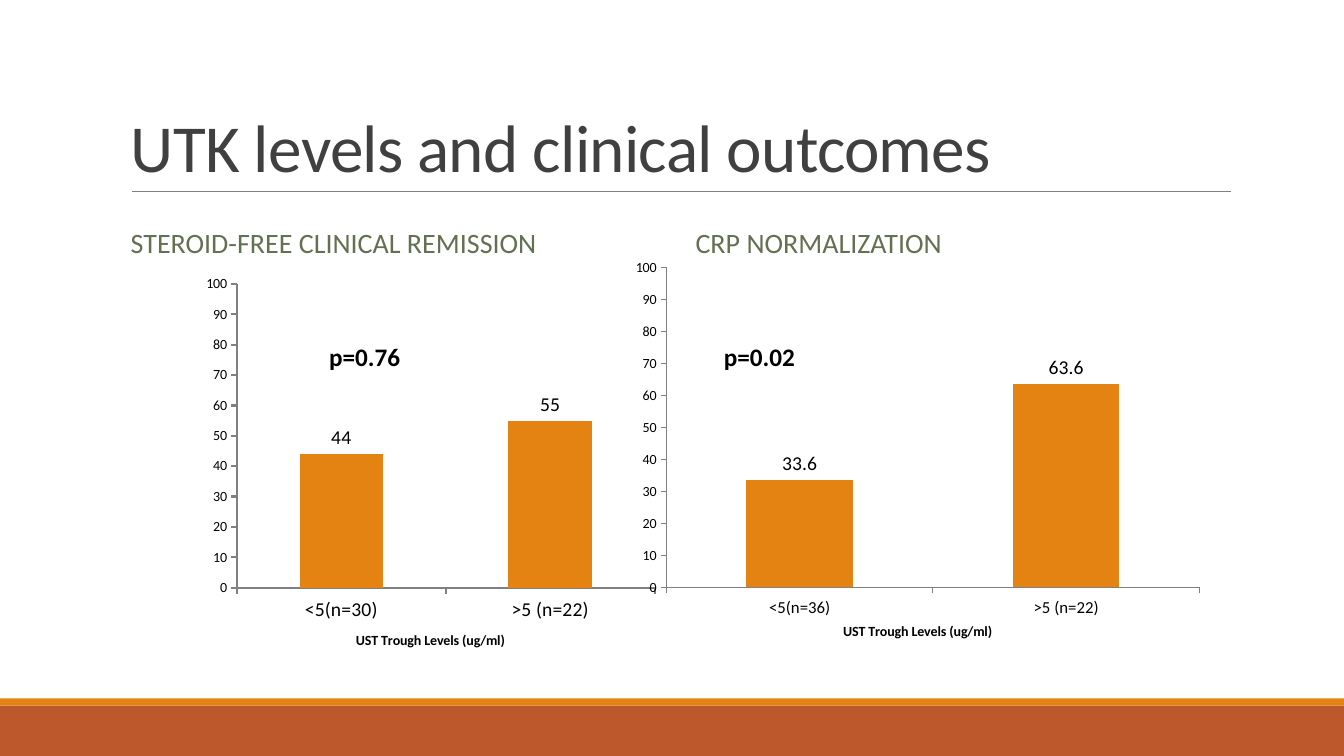
from lxml.etree import SubElement
from pptx import Presentation
from pptx.chart.data import CategoryChartData
from pptx.dml.color import RGBColor
from pptx.enum.chart import XL_CHART_TYPE, XL_LABEL_POSITION, XL_TICK_MARK
from pptx.enum.shapes import MSO_CONNECTOR, MSO_SHAPE
from pptx.enum.text import MSO_ANCHOR, PP_ALIGN
from pptx.oxml import parse_xml
from pptx.oxml.ns import nsdecls, qn
from pptx.util import Pt

EMU_PER_PX = 9525  # 96 px to the inch
TITLE_ONLY = 5

RUST = RGBColor(0xBD, 0x58, 0x2C)
ORANGE = RGBColor(0xE4, 0x83, 0x12)
OLIVE = RGBColor(0x63, 0x70, 0x52)
CHARCOAL = RGBColor(0x40, 0x40, 0x40)
GRAY = RGBColor(0x80, 0x80, 0x80)
BLACK = RGBColor(0, 0, 0)


def px(*lengths):
    return [length * EMU_PER_PX for length in lengths]


class OutcomeSlide:
    font_name = "Calibri"

    def __init__(self, presentation):
        self.slide = presentation.slides.add_slide(presentation.slide_layouts[TITLE_ONLY])
        self.shapes = self.slide.shapes

    def style_font(self, font, size, color, bold=False):
        font.name, font.size, font.bold = self.font_name, Pt(size), bold
        font.color.rgb = color

    def fill_frame(self, frame, words, size, color, anchor, bold=False, line_spacing=1.0):
        frame.word_wrap = True
        frame.vertical_anchor = anchor
        frame.text = words
        paragraph = frame.paragraphs[0]
        paragraph.alignment = PP_ALIGN.LEFT
        paragraph.line_spacing = line_spacing
        self.style_font(paragraph.font, size, color, bold)
        return paragraph

    def title(self, words, *box):
        heading = self.shapes.title
        heading.left, heading.top, heading.width, heading.height = px(*box)
        paragraph = self.fill_frame(heading.text_frame, words, 48, CHARCOAL,
                                    MSO_ANCHOR.BOTTOM, line_spacing=0.85)
        paragraph.runs[0].font._element.set("spc", "-50")

    def text(self, words, box, size, color, **style):
        frame = self.shapes.add_textbox(*px(*box)).text_frame
        return self.fill_frame(frame, words, size, color, **style)

    def band(self, color, *box):
        band = self.shapes.add_shape(MSO_SHAPE.RECTANGLE, *px(*box))
        band.shadow.inherit = False
        band.fill.solid()
        band.fill.fore_color.rgb = color
        band.line.fill.background()

    def rule(self, *ends):
        rule = self.shapes.add_connector(MSO_CONNECTOR.STRAIGHT, *px(*ends))
        rule.line.color.rgb = GRAY
        rule.line.width = Pt(0.5)
        SubElement(rule._element.spPr, qn("a:effectLst"))

    def axis(self, axis, size, line_width):
        axis.has_major_gridlines = False
        axis.major_tick_mark = XL_TICK_MARK.OUTSIDE
        axis.minor_tick_mark = XL_TICK_MARK.NONE
        self.style_font(axis.tick_labels.font, size, BLACK)
        axis.format.line.color.rgb = GRAY
        axis.format.line.width = Pt(line_width)

    def column_chart(self, categories, percentages, box, plot_area, category_size, line_width):
        data = CategoryChartData()
        data.categories = categories
        data.add_series("Series 1", percentages)
        chart = self.shapes.add_chart(XL_CHART_TYPE.COLUMN_CLUSTERED, *px(*box), data).chart
        chart.has_title = chart.has_legend = False
        self.style_font(chart.font, 10, BLACK)

        # Axes
        self.axis(chart.category_axis, category_size, line_width)
        self.axis(chart.value_axis, 10, line_width)
        chart.value_axis.minimum_scale, chart.value_axis.maximum_scale = 0, 100
        chart.value_axis.major_unit = 10
        caption = chart.category_axis.axis_title.text_frame
        caption.text = "UST Trough Levels (ug/ml)"
        self.style_font(caption.paragraphs[0].font, 10, BLACK, bold=True)

        # Columns and value labels
        plot = chart.plots[0]
        plot.gap_width = 150
        plot.vary_by_categories = False
        columns = plot.series[0].format.fill
        columns.solid()
        columns.fore_color.rgb = ORANGE
        plot.has_data_labels = True
        labels = plot.data_labels
        labels.show_value = True
        labels.position = XL_LABEL_POSITION.OUTSIDE_END
        self.style_font(labels.font, 14, BLACK)

        self.place_plot(chart, plot_area)

    def place_plot(self, chart, plot_area):
        """Fix the inner plot area and let the slide show through."""
        root = chart._chartSpace
        area = root.find(".//" + qn("c:plotArea"))
        for old in area.findall(qn("c:layout")):
            area.remove(old)
        modes = '<c:layoutTarget val="inner"/><c:xMode val="edge"/><c:yMode val="edge"/>'
        sizes = "".join(f'<c:{key} val="{share}"/>' for key, share in zip("xywh", plot_area))
        area.insert(0, parse_xml(f'<c:layout {nsdecls("c")}><c:manualLayout>{modes}{sizes}'
                                 '</c:manualLayout></c:layout>'))
        root.find(qn("c:txPr")).addprevious(parse_xml(
            f'<c:spPr {nsdecls("c", "a")}><a:noFill/><a:ln><a:noFill/></a:ln></c:spPr>'))


def main():
    presentation = Presentation()
    presentation.slide_width, presentation.slide_height = px(1280, 720)
    outcomes = OutcomeSlide(presentation)

    # Footer bands and title
    outcomes.band(RUST, 0, 672, 1280, 48)
    outcomes.band(ORANGE, 0, 665, 1280, 7)
    outcomes.rule(126, 182, 1172, 182)
    outcomes.title("UTK levels and clinical outcomes", 115, 30, 1056, 152)

    # Column headings
    for heading, left in (("STEROID-FREE CLINICAL REMISSION", 115),
                          ("CRP NORMALIZATION", 653)):
        paragraph = outcomes.text(heading, (left, 194, 518, 78), 20, OLIVE,
                                  anchor=MSO_ANCHOR.MIDDLE, line_spacing=0.9)
        paragraph.space_before, paragraph.space_after = Pt(12), Pt(2)

    # Charts
    outcomes.column_chart(("<5(n=30)", ">5 (n=22)"), (44, 55), (176, 256, 452, 366),
                          (0.11, 0.04, 0.88, 0.79), category_size=14, line_width=1.5)
    outcomes.column_chart(("<5(n=36)", ">5 (n=22)"), (33.6, 63.6), (584, 232, 564, 381),
                          (0.09, 0.06, 0.9, 0.8), category_size=12, line_width=0.75)

    # Significance
    for p_value, left in (("p=0.76", 304), ("p=0.02", 680)):
        outcomes.text(p_value, (left, 320, 232, 40), 18, BLACK,
                      anchor=MSO_ANCHOR.TOP, bold=True)

    presentation.save("out.pptx")


if __name__ == "__main__":
    main()
